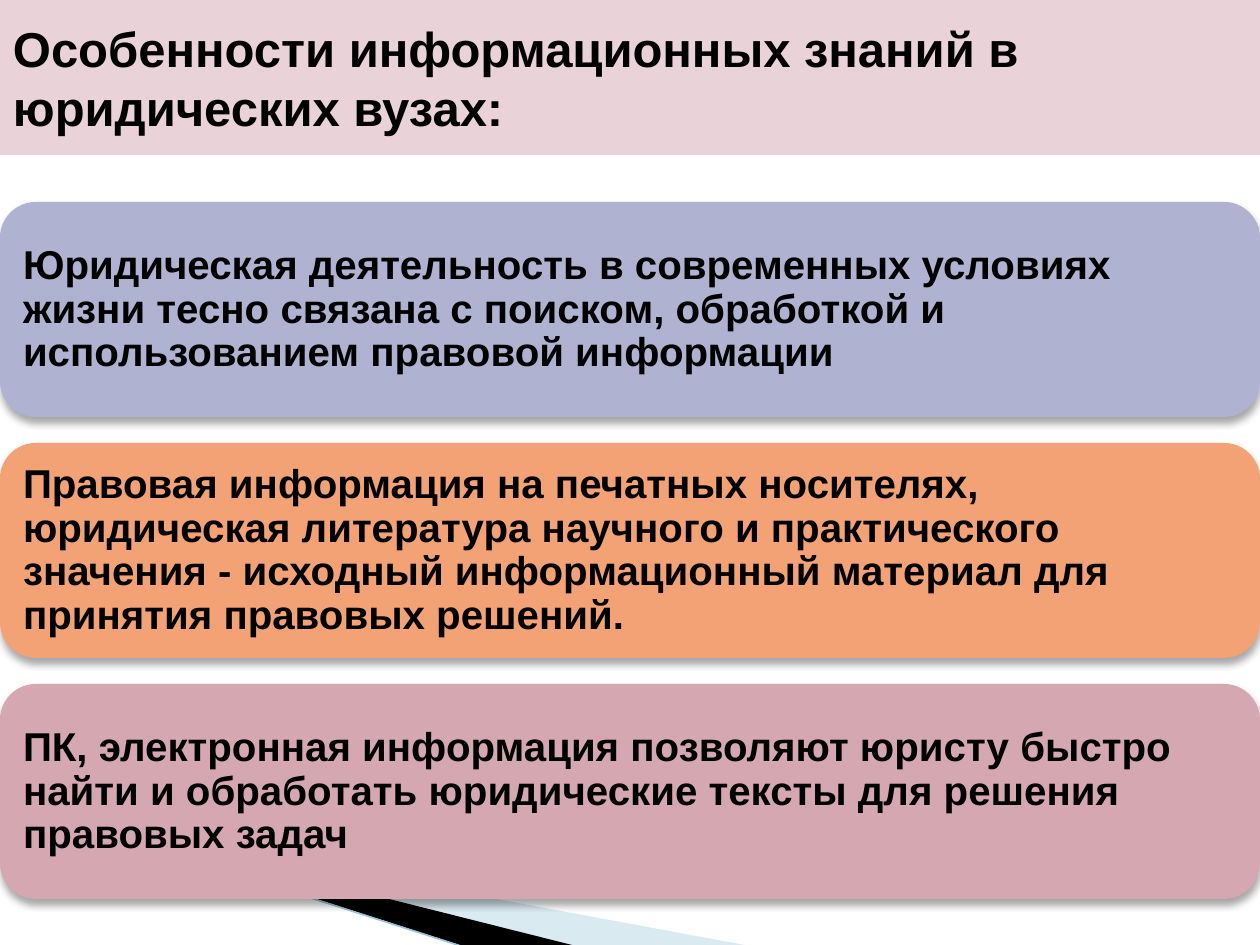
from lxml import etree
from pptx import Presentation
from pptx.dml.color import RGBColor
from pptx.enum.shapes import MSO_CONNECTOR, MSO_SHAPE
from pptx.enum.text import MSO_ANCHOR, MSO_AUTO_SIZE, PP_ALIGN
from pptx.oxml import parse_xml
from pptx.oxml.ns import nsdecls, qn
from pptx.util import Pt

PX = 914400 / 126
STRAIGHT = MSO_CONNECTOR.STRAIGHT
ROUNDED = MSO_SHAPE.ROUNDED_RECTANGLE
MIDDLE = MSO_ANCHOR.MIDDLE
NO_FIT = MSO_AUTO_SIZE.NONE
LEFT = PP_ALIGN.LEFT

BLACK = RGBColor(0x00, 0x00, 0x00)
ROSE = RGBColor(0xEA, 0xD3, 0xD8)
LILAC = RGBColor(0xAF, 0xB2, 0xD0)
ORANGE = RGBColor(0xF3, 0xA2, 0x76)
PINK = RGBColor(0xD5, 0xA7, 0xB1)
PALE_BLUE = RGBColor(0xA0, 0xCB, 0xDC)
SKY = RGBColor(0x97, 0xC5, 0xD8)

TITLE = "Особенности информационных знаний в юридических вузах:"
CARDS = [
    (LILAC, "Юридическая деятельность в современных условиях жизни тесно "
            "связана с поиском, обработкой и использованием правовой информации"),
    (ORANGE, "Правовая информация на печатных носителях, юридическая литература "
             "научного и практического значения - исходный информационный "
             "материал для принятия правовых решений."),
    (PINK, "ПК, электронная информация позволяют юристу быстро найти и "
           "обработать юридические тексты для решения правовых задач"),
]
CARD_TOP, CARD_HEIGHT, CARD_STEP = 202, 215, 241

SHADOW = (
    f'<a:effectLst {nsdecls("a")}>'
    '<a:outerShdw blurRad="50800" dist="38100" dir="5400000" rotWithShape="0">'
    '<a:srgbClr val="000000"><a:alpha val="35000"/></a:srgbClr>'
    '</a:outerShdw></a:effectLst>'
)


def emu(*lengths):
    return [round(n * PX) for n in lengths]


class Deck:
    """Hold the text style and the current slide, and draw each kind of element."""

    def __init__(self, prs):
        self.slide = prs.slides.add_slide(prs.slide_layouts[5])
        self.shapes = self.slide.shapes
        self.font = {"name": "Arial", "bold": True}
        self.frame = {"word_wrap": True, "auto_size": NO_FIT,
                      "vertical_anchor": MIDDLE}

    def set_text(self, sp, text, size, spacing):
        tf = sp.text_frame
        for name, value in self.frame.items():
            setattr(tf, name, value)
        for side in ("left", "top", "right", "bottom"):
            setattr(tf, f"margin_{side}", emu(13)[0])
        p = tf.paragraphs[0]
        p.alignment = LEFT
        p.line_spacing = spacing
        r = p.add_run()
        r.text = text
        for name, value in {**self.font, "size": Pt(size)}.items():
            setattr(r.font, name, value)
        r.font.color.rgb = BLACK

    def paint(self, sp, color):
        sp.fill.solid()
        sp.fill.fore_color.rgb = color

    def title(self, text, box, color):
        sp = self.shapes.title
        for name, value in zip(("left", "top", "width", "height"), emu(*box)):
            setattr(sp, name, value)
        self.paint(sp, color)
        self.set_text(sp, text, 28, 1.0)

    def swoosh(self, points, color, alpha=100):
        builder = self.shapes.build_freeform(*points[0], scale=PX)
        builder.add_line_segments(points[1:], close=True)
        sp = builder.convert_to_shape()
        sp.shadow.inherit = False
        sp.line.fill.background()
        self.paint(sp, color)
        if alpha < 100:
            clr = sp._element.spPr.find(f".//{qn('a:srgbClr')}")
            etree.SubElement(clr, qn("a:alpha"), val=str(alpha * 1000))

    def line(self, ends, color, width):
        cxn = self.shapes.add_connector(STRAIGHT, *emu(*ends))
        cxn.line.color.rgb = color
        cxn.line.width = Pt(width)
        etree.SubElement(cxn._element.spPr, qn("a:effectLst"))

    def card(self, top, color, text):
        sp = self.shapes.add_shape(ROUNDED, *emu(0, top, 1260, CARD_HEIGHT))
        self.paint(sp, color)
        sp.line.fill.background()
        sp._element.spPr.append(parse_xml(SHADOW))
        tb = self.shapes.add_textbox(*emu(10, top + 11, 1239, 194))
        self.set_text(tb, text, 23, 0.9)


def main():
    prs = Presentation()
    prs.slide_width, prs.slide_height = emu(1260, 945)
    deck = Deck(prs)
    deck.swoosh([(69, 820), (750, 946), (575, 946), (69, 819)], PALE_BLUE, 40)
    deck.swoosh([(67, 818), (576, 946), (469, 948), (68, 819)], BLACK)
    deck.line((-1, 798, 467, 948), SKY, 0.95)
    for i, (color, text) in enumerate(CARDS):
        deck.card(CARD_TOP + i * CARD_STEP, color, text)
    deck.title(TITLE, (0, 0, 1260, 155), ROSE)
    prs.save("out.pptx")


if __name__ == "__main__":
    main()
